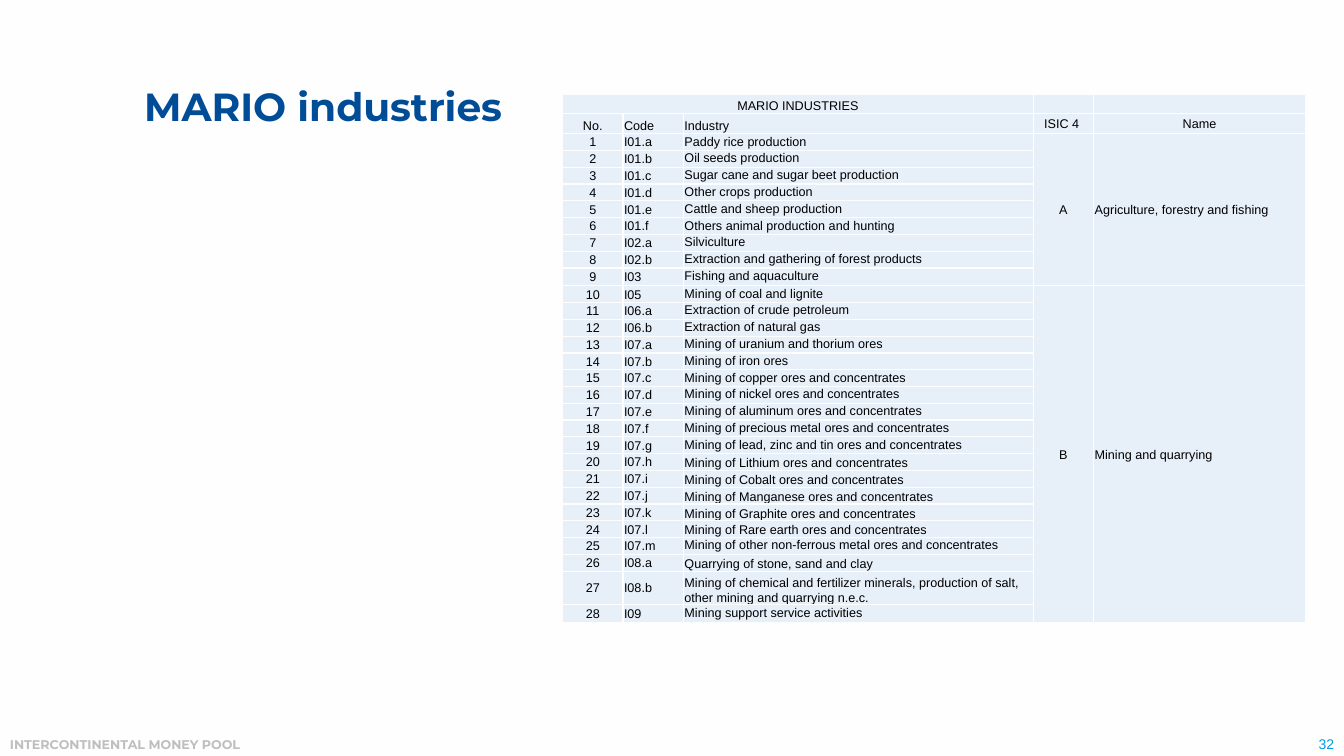
import pptx
import pptx.dml.color
import pptx.enum.text
import pptx.oxml
import pptx.oxml.ns
import pptx.util
import lxml.etree

Pt = pptx.util.Pt
ALIGN = pptx.enum.text.PP_ALIGN
ANCHOR = pptx.enum.text.MSO_ANCHOR
qn = pptx.oxml.ns.qn

GROUPS = [
    ("A", "Agriculture, forestry and fishing", [
        ("I01.a", "Paddy rice production"),
        ("I01.b", "Oil seeds production"),
        ("I01.c", "Sugar cane and sugar beet production"),
        ("I01.d", "Other crops production"),
        ("I01.e", "Cattle and sheep production"),
        ("I01.f", "Others animal production and hunting"),
        ("I02.a", "Silviculture"),
        ("I02.b", "Extraction and gathering of forest products"),
        ("I03", "Fishing and aquaculture"),
    ]),
    ("B", "Mining and quarrying", [
        ("I05", "Mining of coal and lignite"),
        ("I06.a", "Extraction of crude petroleum"),
        ("I06.b", "Extraction of natural gas"),
        ("I07.a", "Mining of uranium and thorium ores"),
        ("I07.b", "Mining of iron ores"),
        ("I07.c", "Mining of copper ores and concentrates"),
        ("I07.d", "Mining of nickel ores and concentrates"),
        ("I07.e", "Mining of aluminum ores and concentrates"),
        ("I07.f", "Mining of precious metal ores and concentrates"),
        ("I07.g", "Mining of lead, zinc and tin ores and concentrates"),
        ("I07.h", "Mining of Lithium ores and concentrates"),
        ("I07.i", "Mining of Cobalt ores and concentrates"),
        ("I07.j", "Mining of Manganese ores and concentrates"),
        ("I07.k", "Mining of Graphite ores and concentrates"),
        ("I07.l", "Mining of Rare earth ores and concentrates"),
        ("I07.m", "Mining of other non-ferrous metal ores and concentrates"),
        ("I08.a", "Quarrying of stone, sand and clay"),
        ("I08.b", "Mining of chemical and fertilizer minerals, production of salt, "
                  "other mining and quarrying n.e.c."),
        ("I09", "Mining support service activities"),
    ]),
]
HEADS = ["No.", "Code", "Industry", "ISIC 4 ", "Name"]
WIDTHS = [43.2, 43.2, 249.8, 43.2, 151.2]
HEIGHTS = {0: 13.5, 1: 14.5, 10: 12.75, 28: 24, 29: 12.75}
LOW = {20, 21, 22, 23, 24, 26, 27}


def color(code):
    return pptx.dml.color.RGBColor.from_string(code)


def write(frame, text, size=9, font="Arial", fill="000000", bold=False,
          align=ALIGN.LEFT, space=None):
    par = frame.paragraphs[0]
    par.alignment = align
    par.line_spacing = space
    if not text:
        lxml.etree.SubElement(par._p, qn("a:endParaRPr"), sz=str(size * 100))
        return
    run = par.add_run()
    run.text = text
    run.font.size = Pt(size)
    run.font.name = font
    run.font.bold = bold
    run.font.color.rgb = color(fill)


def place(shape, box):
    shape.left, shape.top, shape.width, shape.height = map(Pt, box)


def title(slide, box):
    shape = slide.shapes.title
    place(shape, box)
    frame = shape.text_frame
    frame.margin_left = frame.margin_right = 0
    frame.margin_top = frame.margin_bottom = 0
    frame.vertical_anchor = ANCHOR.MIDDLE
    write(frame, "MARIO industries", size=28, font="Montserrat",
          fill="004C97", bold=True, space=0.9)


def label(slide, box, text, anchor, **style):
    frame = slide.shapes.add_textbox(*map(Pt, box)).text_frame
    frame.word_wrap = True
    frame.vertical_anchor = anchor
    write(frame, text, **style)


def border(cell):
    props = cell._tc.get_or_add_tcPr()
    for side in "LRTB":
        line = lxml.etree.SubElement(props, qn("a:ln" + side), w=str(Pt(1)))
        solid = lxml.etree.SubElement(line, qn("a:solidFill"))
        lxml.etree.SubElement(solid, qn("a:srgbClr"), val="FEFEFE")


def fill_cell(cell, text, align, anchor):
    border(cell)
    cell.fill.solid()
    cell.fill.fore_color.rgb = color("E7EFF9")
    cell.margin_left = cell.margin_right = cell.margin_top = Pt(0.72)
    cell.margin_bottom = 0
    cell.vertical_anchor = anchor
    write(cell.text_frame, text, align=align)


def collect():
    rows = [["MARIO INDUSTRIES", "", "", "", ""], HEADS]
    spans = []
    for sector, name, items in GROUPS:
        spans.append((len(rows), len(rows) + len(items) - 1))
        for pos, (code, trade) in enumerate(items):
            pair = ["", ""] if pos else [sector, name]
            rows.append([str(len(rows) - 1), code, trade] + pair)
    return rows, spans


def layout(row, col):
    center = col in (0, 3) or (row, col) == (1, 4)
    align = ALIGN.CENTER if center else ALIGN.LEFT
    if row < 2 and col < 3:
        return align, ANCHOR.BOTTOM
    if col == 2:
        return align, ANCHOR.BOTTOM if row - 1 in LOW else ANCHOR.TOP
    return align, ANCHOR.MIDDLE


def grid(slide, box):
    rows, spans = collect()
    shape = slide.shapes.add_table(len(rows), len(HEADS), *map(Pt, box))
    table = shape.table
    table.first_row = table.horz_banding = False
    for col, width in enumerate(WIDTHS):
        table.columns[col].width = Pt(width)
    for row, texts in enumerate(rows):
        table.rows[row].height = Pt(HEIGHTS.get(row, 12))
        for col, text in enumerate(texts):
            fill_cell(table.cell(row, col), text, *layout(row, col))
    table.cell(0, 0).merge(table.cell(0, 2))
    for first, last in spans:
        for col in (3, 4):
            table.cell(first, col).merge(table.cell(last, col))


def main():
    deck = pptx.Presentation()
    deck.slide_width, deck.slide_height = Pt(960), Pt(540)
    slide = deck.slides.add_slide(deck.slide_layouts[5])
    slide.background.fill.solid()
    slide.background.fill.fore_color.rgb = color("FEFEFE")
    label(slide, (0, 522.7, 720, 18), "INTERCONTINENTAL MONEY POOL", ANCHOR.TOP,
          font="Montserrat", fill="BEBEBE", bold=True)
    label(slide, (864.7, 521.3, 95.3, 19.4), "32", ANCHOR.BOTTOM,
          size=10, fill="009CDE", align=ALIGN.RIGHT)
    title(slide, (103, 38.9, 764.6, 77))
    grid(slide, (401.8, 67.5, 530.6, 377.5))
    deck.save("out.pptx")


if __name__ == "__main__":
    main()
